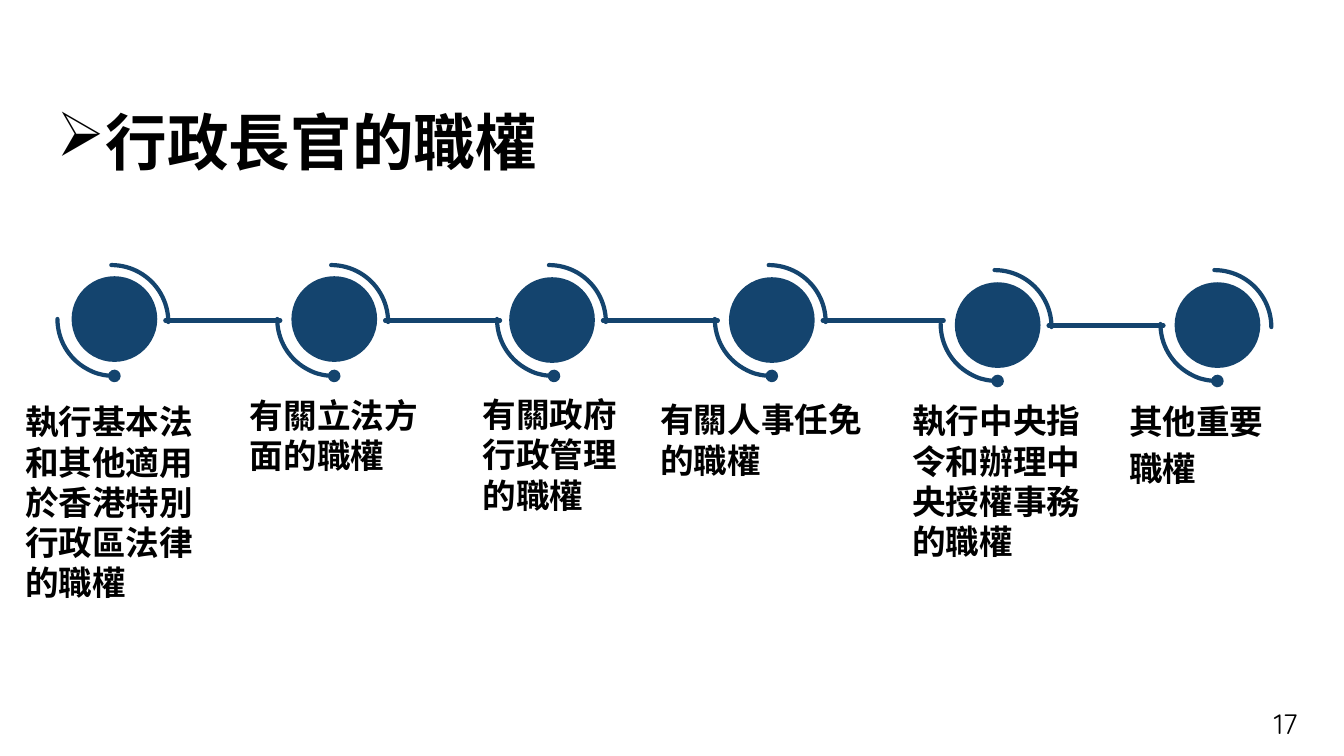
from dataclasses import dataclass
from itertools import pairwise

from lxml import etree
from pptx import Presentation
from pptx.dml.color import RGBColor
from pptx.enum.shapes import MSO_CONNECTOR, MSO_SHAPE
from pptx.enum.text import MSO_ANCHOR, PP_ALIGN
from pptx.oxml.ns import qn
from pptx.util import Emu, Pt

EMU_PER_PX = 9144
NAVY = "14446E"
BLACK = "000000"
ARC_SIZE = 113
DOT_SIZE = 85


@dataclass(frozen=True)
class Box:
    left: int
    top: int
    width: int
    height: int


@dataclass(frozen=True)
class Step:
    """One power: its upper arc's corner, its lower arc's left, its label."""
    left: int
    top: int
    lower_left: int
    dot_top: int
    label: Box
    lines: tuple[str, ...]


STEPS = [
    Step(54, 263, 57, 274, Box(15, 393, 217, 212),
         ("執行基本法和其他適用於香港特別行政區法律的職權",)),
    Step(272, 263, 275, 274, Box(238, 387, 202, 91), ("有關立法方面的職權",)),
    Step(488, 263, 493, 275, Box(469, 386, 167, 131), ("有關政府行政管理的職權",)),
    Step(706, 263, 709, 275, Box(645, 391, 228, 91), ("有關人事任免的職權",)),
    Step(930, 268, 933, 280, Box(895, 392, 193, 172),
         ("執行中央指令和辦理中央授權事務的職權",)),
    Step(1148, 268, 1151, 280, Box(1110, 393, 208, 99), ("其他重要", "職權")),
]


def px(n: int) -> Emu:
    return Emu(n * EMU_PER_PX)


def rgb(color: str) -> RGBColor:
    return RGBColor.from_string(color)


def place(box: Box) -> tuple[Emu, Emu, Emu, Emu]:
    return px(box.left), px(box.top), px(box.width), px(box.height)


def add_text(slide, box: Box, lines: tuple[str, ...], *, size: int, font: str = "Roboto",
             bold: bool = True, align=PP_ALIGN.LEFT, anchor=MSO_ANCHOR.TOP, gap: float = 0):
    tf = slide.shapes.add_textbox(*place(box)).text_frame
    tf.word_wrap = True
    tf.vertical_anchor = anchor
    for i, line in enumerate(lines):
        p = tf.paragraphs[0] if i == 0 else tf.add_paragraph()
        p.alignment = align
        if i:
            p.space_before = Pt(gap)
        r = p.add_run()
        r.text = line
        r.font.name = font
        r.font.size = Pt(size)
        r.font.bold = bold
        r.font.color.rgb = rgb(BLACK)
    return tf


def add_title(slide) -> None:
    tf = add_text(slide, Box(15, 104, 559, 81), ("行政長官的職權",), size=44,
                  align=PP_ALIGN.CENTER, anchor=MSO_ANCHOR.MIDDLE)
    tf.margin_left = tf.margin_right = px(27)
    tf.margin_top = tf.margin_bottom = px(3)
    p = tf.paragraphs[0]
    p.line_spacing = 0.9
    pPr = p._p.get_or_add_pPr()
    pPr.set("marL", str(px(38)))
    pPr.set("indent", str(-px(38)))
    etree.SubElement(pPr, qn("a:buChar"), char="➢")


def add_dot(slide, box: Box) -> None:
    sp = slide.shapes.add_shape(MSO_SHAPE.OVAL, *place(box))
    sp.shadow.inherit = False
    sp.fill.solid()
    sp.fill.fore_color.rgb = rgb(NAVY)
    sp.line.fill.background()


def add_arc(slide, left: int, top: int, start: int, end: int, *, oval: bool = False) -> None:
    """Draw an arc clockwise between two angles in degrees, from the right."""
    sp = slide.shapes.add_shape(MSO_SHAPE.ARC, *place(Box(left, top, ARC_SIZE, ARC_SIZE)))
    sp.shadow.inherit = False
    sp.adjustments[0] = start * 0.6
    sp.adjustments[1] = end * 0.6
    sp.fill.background()
    style_line(sp)
    if oval:
        etree.SubElement(sp.line._get_or_add_ln(), qn("a:headEnd"), type="oval")


def add_link(slide, x1: int, x2: int, y: int) -> None:
    sp = slide.shapes.add_connector(MSO_CONNECTOR.STRAIGHT, px(x1), px(y), px(x2), px(y))
    style_line(sp)
    etree.SubElement(sp._element.spPr, qn("a:effectLst"))


def style_line(sp) -> None:
    sp.line.color.rgb = rgb(NAVY)
    sp.line.width = Pt(3)
    sp.line._get_or_add_ln().set("cap", "rnd")


def add_step(slide, step: Step) -> None:
    add_dot(slide, Box(step.left + 17, step.dot_top, DOT_SIZE, DOT_SIZE))
    add_arc(slide, step.left, step.top, 270, 0)
    add_arc(slide, step.lower_left, step.top - 3, 90, 180, oval=True)
    add_text(slide, step.label, step.lines, size=24, gap=4.8)


def main() -> None:
    prs = Presentation()
    prs.slide_width, prs.slide_height = px(1333), px(750)
    slide = prs.slides.add_slide(prs.slide_layouts[6])
    add_title(slide)
    for step in STEPS:
        add_step(slide, step)
    for step, following in pairwise(STEPS):
        add_link(slide, step.left + 110, following.lower_left + 3, step.top + 55)
    add_text(slide, Box(997, 698, 300, 40), ("17",), size=20, font="Quicksand",
             bold=False, align=PP_ALIGN.RIGHT, anchor=MSO_ANCHOR.MIDDLE)
    prs.save("out.pptx")


if __name__ == "__main__":
    main()
